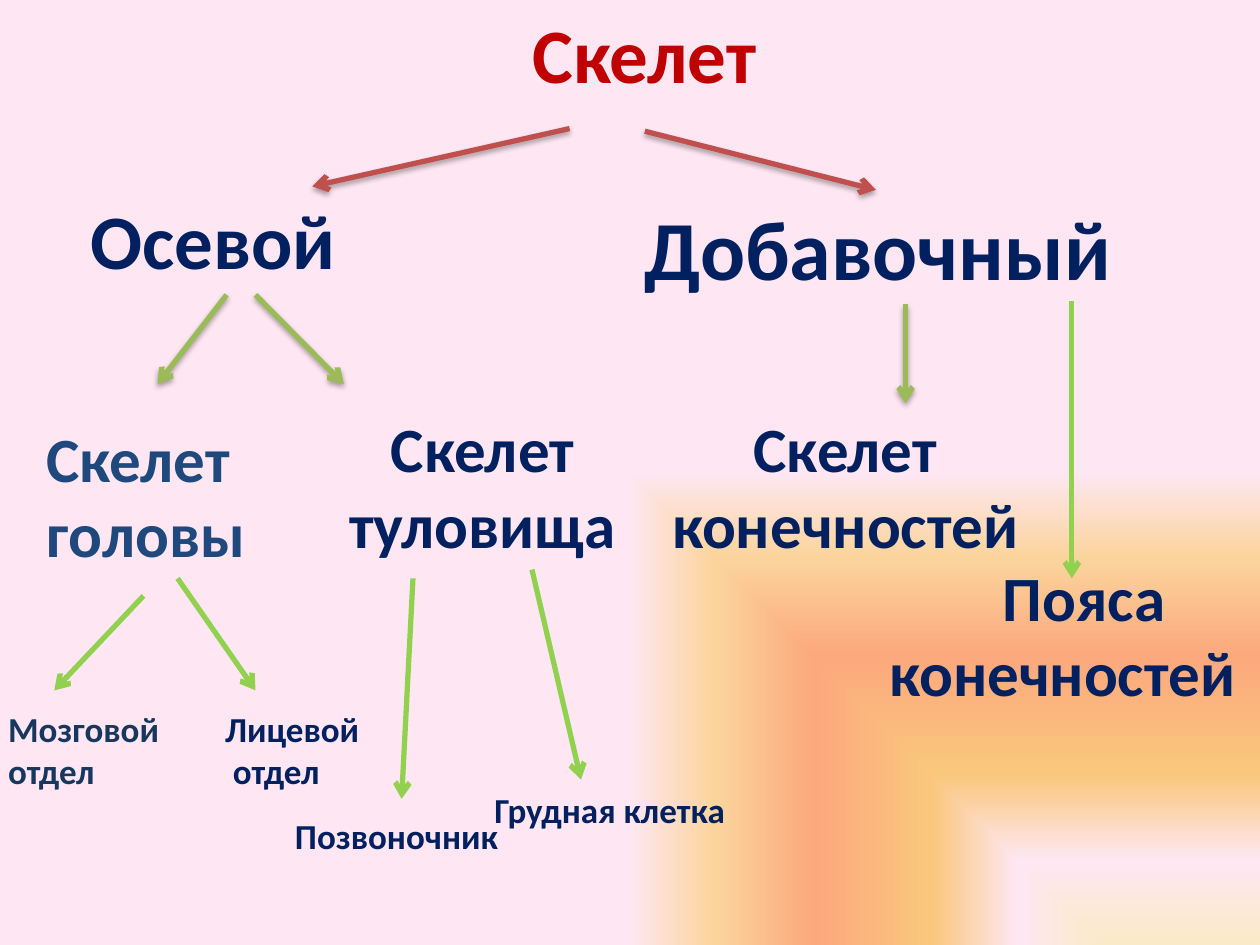
from lxml import etree
from pptx import Presentation
from pptx.dml.color import RGBColor
from pptx.enum.shapes import MSO_CONNECTOR
from pptx.enum.text import PP_ALIGN
from pptx.oxml import parse_xml
from pptx.oxml.ns import nsdecls, qn
from pptx.util import Pt

STRAIGHT = MSO_CONNECTOR.STRAIGHT
LEFT, CENTER = PP_ALIGN.LEFT, PP_ALIGN.CENTER
COLORS = {"title": "C00000", "navy": "002060", "head": "1F497D", "brain": "17375E",
          "red": "C0504D", "olive": "9BBB59", "green": "92D050"}
BACKGROUND = [(0, "FBEAC7"), (18, "FEE7F2"), (36, "FAC77D"),
              (61, "FBA97D"), (82, "FBD49C"), (100, "FEE7F2")]
SHADOW = ('<a:outerShdw blurRad="40000" dist="23000" dir="5400000" rotWithShape="0">'
          '<a:srgbClr val="000000"><a:alpha val="35000"/></a:srgbClr></a:outerShdw>')


def paint_background(s):
    """Fill the slide with a rectangular gradient centred on the lower right corner."""
    s.background.fill.solid()
    bg_pr = s.element.cSld.find(qn("p:bg")).find(qn("p:bgPr"))
    stops = "".join(f'<a:gs pos="{pos * 1000}"><a:srgbClr val="{color}"/></a:gs>'
                    for pos, color in BACKGROUND)
    grad = parse_xml(f'<a:gradFill {nsdecls("a")} rotWithShape="1"><a:gsLst>{stops}</a:gsLst>'
                     '<a:path path="rect"><a:fillToRect l="100000" t="100000"/></a:path>'
                     '</a:gradFill>')
    bg_pr.replace(bg_pr.find(qn("a:solidFill")), grad)


def add_label(s, box, text, size, color="navy", align=LEFT, indent=0):
    """Add bold text, one paragraph per line; indent applies to the last paragraph."""
    tf = s.shapes.add_textbox(*map(Pt, box)).text_frame
    tf.word_wrap = True
    tf.text = text
    for p in tf.paragraphs:
        p.alignment = align
        p.font.name = "Calibri"
        p.font.size = Pt(size)
        p.font.bold = True
        p.font.color.rgb = RGBColor.from_string(COLORS[color])
    if indent:
        tf.paragraphs[-1]._p.get_or_add_pPr().set("indent", str(Pt(indent)))


def add_arrow(s, x, y, ends, color, shadow=False):
    """Draw an arrow; ends holds x1, y1, x2, y2 relative to (x, y)."""
    x1, y1, x2, y2 = ends
    c = s.shapes.add_connector(STRAIGHT, Pt(x + x1), Pt(y + y1), Pt(x + x2), Pt(y + y2))
    c.line.width = Pt(3)
    c.line.color.rgb = RGBColor.from_string(COLORS[color])
    sp_pr = c._element.spPr
    etree.SubElement(sp_pr.find(qn("a:ln")), qn("a:tailEnd"), type="arrow")
    effects = SHADOW if shadow else ""
    sp_pr.append(parse_xml(f'<a:effectLst {nsdecls("a")}>{effects}</a:effectLst>'))


def add_heading(s, x, y):
    add_label(s, (x, y, 264.5, 60), "Скелет", 44, "title", CENTER)
    for ends in [(89.5, 73.5, -57.5, 106.5), (132.5, 75, 264.5, 108.5)]:
        add_arrow(s, x, y, ends, "red", shadow=True)


def add_axial_branch(s, x, y):
    add_label(s, (x + 44.5, y + 0.5, 248, 60), "Осевой", 44)
    for ends in [(129.5, 62.5, 90, 113.5), (146, 62.5, 196.5, 113.5)]:
        add_arrow(s, x, y, ends, "olive", shadow=True)
    add_label(s, (x + 19.5, y + 130, 163.5, 94), "Скелет головы", 36, "head")
    add_label(s, (x + 180, y + 124.5, 191.5, 94), "Скелет туловища", 36, align=CENTER)

    for ends in [(82, 234.5, 31, 288.5), (101.5, 224.5, 146, 288.5),
                 (236, 224.5, 229.5, 350.5), (304, 219.5, 332, 339.5)]:
        add_arrow(s, x, y, ends, "green")
    add_label(s, (x - 2.5, y + 294.5, 146, 55), "Мозговой отдел", 20, "brain")
    add_label(s, (x + 121.5, y + 294.5, 154, 55), "Лицевой\nотдел", 20, indent=4.5)
    add_label(s, (x + 161.5, y + 356, 138, 32), "Позвоночник", 20)
    add_label(s, (x + 275.5, y + 341, 160, 32), "Грудная клетка", 20)


def add_appendicular_branch(s, x, y):
    add_label(s, (x + 8, y + 2.5, 334, 65), "Добавочный", 48)
    add_arrow(s, x, y, (164.5, 68, 164.5, 124.5), "olive", shadow=True)
    add_label(s, (x + 0.5, y + 124.5, 259, 94), "Скелет конечностей", 36, align=CENTER)
    add_arrow(s, x, y, (259.5, 66, 259.5, 224.5), "green")
    add_label(s, (x + 148, y + 209.5, 237, 94), "Пояса конечностей", 36, indent=65)


def main():
    prs = Presentation()
    prs.slide_width, prs.slide_height = Pt(720), Pt(540)
    s = prs.slides.add_slide(prs.slide_layouts[6])
    paint_background(s)
    add_heading(s, 236, 0)
    add_axial_branch(s, 0, 106)
    add_appendicular_branch(s, 353, 106)
    prs.save("out.pptx")


if __name__ == "__main__":
    main()
